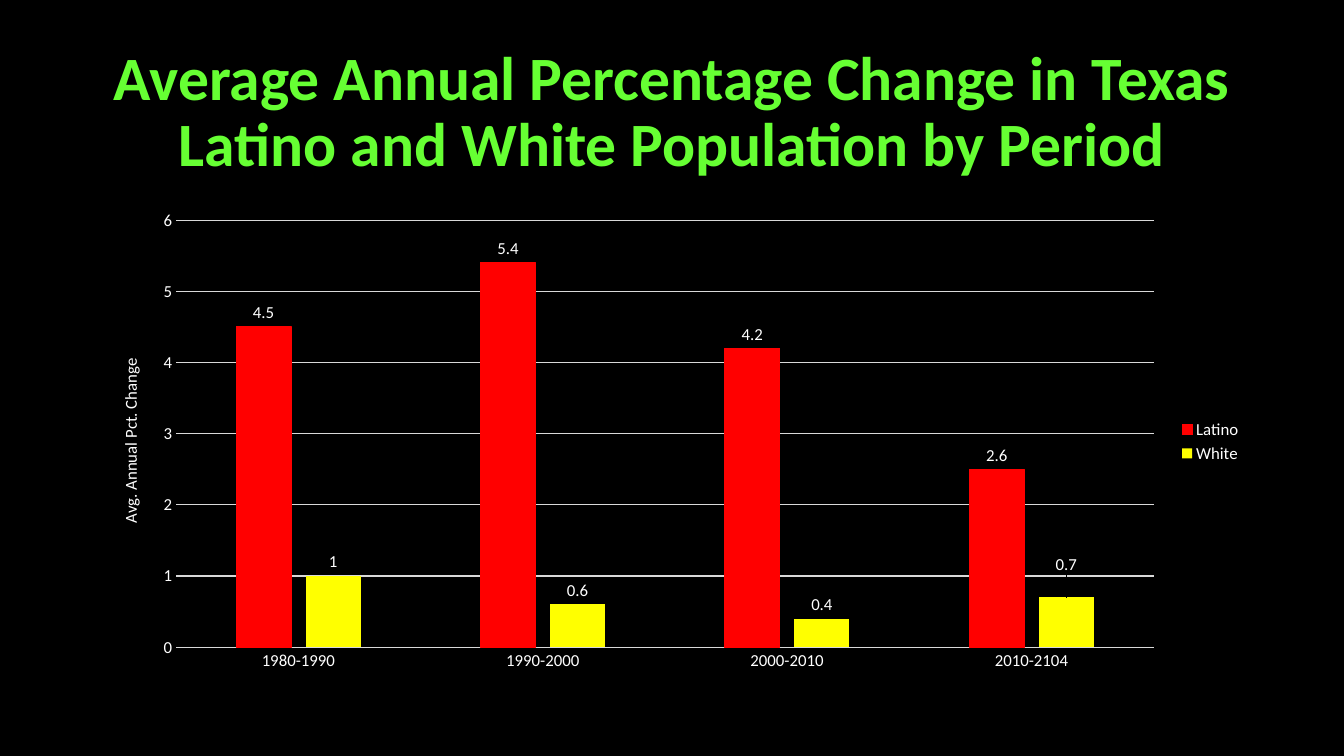
from dataclasses import dataclass

from lxml.etree import SubElement
from pptx import Presentation
from pptx.chart.data import CategoryChartData as ChartData
from pptx.dml.color import RGBColor as RGB
from pptx.enum.chart import XL_CHART_TYPE as Kind
from pptx.enum.chart import XL_LABEL_POSITION as Spot
from pptx.enum.chart import XL_LEGEND_POSITION as Side
from pptx.enum.chart import XL_TICK_MARK as Tick
from pptx.enum.text import MSO_ANCHOR as Anchor
from pptx.enum.text import PP_ALIGN as Align
from pptx.oxml.ns import qn
from pptx.util import Inches, Pt


@dataclass(frozen=True)
class Theme:
    font: str = "Calibri"
    back: RGB = RGB(0, 0, 0)
    head: RGB = RGB(0x66, 0xFF, 0x33)
    text: RGB = RGB(255, 255, 255)
    grid: RGB = RGB(0xD9, 0xD9, 0xD9)
    latino: RGB = RGB(255, 0, 0)
    white: RGB = RGB(255, 255, 0)
    big: int = 44
    small: int = 12
    line: float = 0.75


THEME = Theme()
LEFT, WIDTH = 0.92, 11.5
PERIODS = ["1980-1990", "1990-2000", "2000-2010", "2010-2104"]
SERIES = [
    ("Latino", [4.5, 5.4, 4.2, 2.5], THEME.latino),
    ("White", [1, 0.6, 0.4, 0.7], THEME.white),
]


def style(font, size=THEME.small, color=THEME.text, bold=False):
    font.name = THEME.font
    font.size = Pt(size)
    font.bold = bold
    font.color.rgb = color


def rule(line, color=THEME.grid):
    line.color.rgb = color
    line.width = Pt(THEME.line)


def place(parent, index, **values):
    """Give a chart part a manual layout, as child number index."""
    for old in parent.findall(qn("c:layout")):
        parent.remove(old)
    layout = SubElement(parent, qn("c:layout"))
    manual = SubElement(layout, qn("c:manualLayout"))
    for name, value in values.items():
        SubElement(manual, qn(f"c:{name}")).set("val", str(value))
    parent.insert(index, layout)


def add_title(slide, text):
    box = slide.shapes.add_textbox(
        Inches(LEFT), Inches(0.4), Inches(WIDTH), Inches(1.45))
    frame = box.text_frame
    frame.word_wrap = True
    frame.vertical_anchor = Anchor.MIDDLE
    frame.text = text
    para = frame.paragraphs[0]
    para.alignment = Align.CENTER
    para.line_spacing = 0.9
    style(para.runs[0].font, THEME.big, THEME.head, True)


def set_axes(chart):
    cat, val = chart.category_axis, chart.value_axis
    for axis in (cat, val):
        axis.major_tick_mark = axis.minor_tick_mark = Tick.NONE
        style(axis.tick_labels.font)
    rule(cat.format.line)
    val.format.line.fill.background()
    val.minimum_scale, val.maximum_scale, val.major_unit = 0, 6, 1
    rule(val.major_gridlines.format.line)

    title = val.axis_title
    title.text_frame.text = "Avg. Annual Pct. Change"
    style(title.text_frame.paragraphs[0].runs[0].font)
    node = title._element
    body = node.find(f".//{qn('a:bodyPr')}")
    body.set("rot", "-5400000")
    body.set("vert", "horz")
    place(node, 1, xMode="edge", yMode="edge", x=0.02, y=0.32)


def set_bars(plot):
    plot.gap_width = 219
    plot.overlap = -27
    plot.vary_by_categories = False
    for series, (_, _, color) in zip(plot.series, SERIES):
        fill = series.format.fill
        fill.solid()
        fill.fore_color.rgb = color
        labels = series.data_labels
        labels.show_value = True
        labels.position = Spot.OUTSIDE_END
        style(labels.font)

    latino, white = plot.series
    label = latino.points[3].data_label
    label.text_frame.text = "2.6"
    style(label.text_frame.paragraphs[0].runs[0].font)
    label.position = Spot.OUTSIDE_END
    rule(latino.format.line, THEME.latino)

    label = white.points[3].data_label
    style(label.font)
    label.position = Spot.OUTSIDE_END
    node = white._element.find(f".//{qn('c:dLbl')}")
    place(node, 1, x=0, y=-0.04)


def add_bars(slide):
    data = ChartData()
    data.categories = PERIODS
    for name, values, _ in SERIES:
        data.add_series(name, values)
    chart = slide.shapes.add_chart(
        Kind.COLUMN_CLUSTERED, Inches(LEFT), Inches(2),
        Inches(WIDTH), Inches(4.76), data).chart
    style(chart.font)
    chart.has_title = False
    chart.has_legend = True
    chart.legend.position = Side.RIGHT
    chart.legend.include_in_layout = False
    style(chart.legend.font)
    set_axes(chart)
    set_bars(chart.plots[0])
    area = chart._chartSpace.find(f".//{qn('c:plotArea')}")
    place(area, 0, layoutTarget="inner", xMode="edge", yMode="edge",
          x=0.072, y=0.039, w=0.843, h=0.89)


def main():
    deck = Presentation()
    deck.slide_width, deck.slide_height = Inches(13.33), Inches(7.5)
    slide = deck.slides.add_slide(deck.slide_layouts[6])
    fill = slide.background.fill
    fill.solid()
    fill.fore_color.rgb = THEME.back
    add_title(slide, "Average Annual Percentage Change in Texas "
                     "Latino and White Population by Period")
    add_bars(slide)
    deck.save("out.pptx")


if __name__ == "__main__":
    main()
